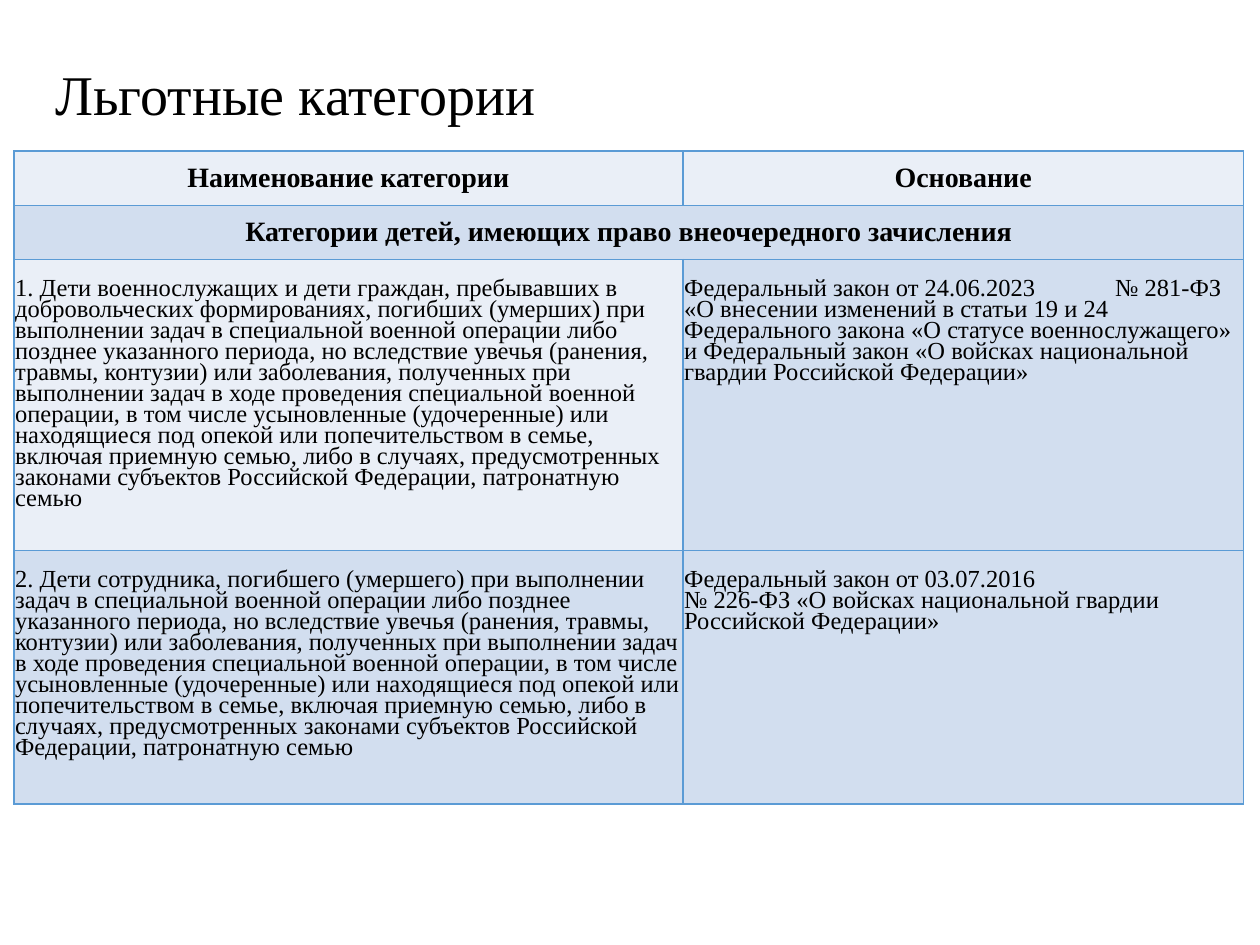
from typing import NamedTuple

import pptx
import pptx.dml.color
import pptx.enum.text
import pptx.oxml
import pptx.oxml.ns
import pptx.util
from pptx.util import Inches, Pt

FONT = "Times New Roman"
COLORS = {"text": "000000", "border": "5B9BD5", "light": "EAEFF7", "band": "D2DEEF"}
ALIGN = pptx.enum.text.PP_ALIGN
COL_WIDTHS = (5.31, 4.45)
ROW_HEIGHTS = (0.43, 0.43, 2.31, 2.01)
TAB_STOP = 3.42


class CellSpec(NamedTuple):
    row: int
    col: int
    text: str
    fill: str
    heading: bool = False
    span: int = 1


CELLS = [
    CellSpec(0, 0, "Наименование категории", "light", heading=True),
    CellSpec(0, 1, "Основание", "light", heading=True),
    CellSpec(1, 0, "Категории детей, имеющих право внеочередного зачисления",
             "band", heading=True, span=2),
    CellSpec(2, 0,
             "1. Дети военнослужащих и дети граждан, пребывавших в добровольческих "
             "формированиях, погибших (умерших) при выполнении задач в специальной "
             "военной операции либо позднее указанного периода, но вследствие увечья "
             "(ранения, травмы, контузии) или заболевания, полученных при выполнении "
             "задач в ходе проведения специальной военной операции, в том числе "
             "усыновленные (удочеренные) или находящиеся под опекой или "
             "попечительством в семье, включая приемную семью, либо в случаях, "
             "предусмотренных законами субъектов Российской Федерации, патронатную "
             "семью", "light"),
    CellSpec(2, 1,
             "Федеральный закон от 24.06.2023\t№ 281-ФЗ «О внесении изменений в "
             "статьи 19 и 24 Федерального закона «О статусе военнослужащего» и "
             "Федеральный закон «О войсках национальной гвардии Российской "
             "Федерации»", "band"),
    CellSpec(3, 0,
             "2. Дети сотрудника, погибшего (умершего) при выполнении задач в "
             "специальной военной операции либо позднее указанного периода, но "
             "вследствие увечья (ранения, травмы, контузии) или заболевания, "
             "полученных при выполнении задач в ходе проведения специальной военной "
             "операции, в том числе усыновленные (удочеренные) или находящиеся под "
             "опекой или попечительством в семье, включая приемную семью, либо в "
             "случаях, предусмотренных законами субъектов Российской Федерации, "
             "патронатную семью", "band"),
    CellSpec(3, 1,
             "Федеральный закон от 03.07.2016\v№ 226-ФЗ «О войсках национальной "
             "гвардии Российской Федерации»", "band"),
]


def rgb(name: str) -> pptx.dml.color.RGBColor:
    return pptx.dml.color.RGBColor.from_string(COLORS[name])


def format_runs(p, size: int, bold: bool = False) -> None:
    for r in p.runs:
        for name, value in {"name": FONT, "size": Pt(size), "bold": bold}.items():
            setattr(r.font, name, value)
        r.font.color.rgb = rgb("text")


def add_borders(cell) -> None:
    tc_pr = cell._tc.get_or_add_tcPr()
    for side in ("lnL", "lnR", "lnT", "lnB"):
        tc_pr.append(pptx.oxml.parse_xml(
            f'<a:{side} {pptx.oxml.ns.nsdecls("a")} w="{Pt(1)}"><a:solidFill>'
            f'<a:srgbClr val="{COLORS["border"]}"/></a:solidFill></a:{side}>'))


def add_tab_stop(p, position: float) -> None:
    p._p.get_or_add_pPr().append(pptx.oxml.parse_xml(
        f'<a:tabLst {pptx.oxml.ns.nsdecls("a")}>'
        f'<a:tab pos="{Inches(position)}" algn="l"/></a:tabLst>'))


def fill_cell(table, spec: CellSpec) -> None:
    cell = table.cell(spec.row, spec.col)
    if spec.span > 1:
        cell.merge(table.cell(spec.row, spec.col + spec.span - 1))
    for col in range(spec.col, spec.col + spec.span):
        part = table.cell(spec.row, col)
        add_borders(part)
        part.fill.solid()
        part.fill.fore_color.rgb = rgb(spec.fill)
    margins = {"margin_left": 0.01, "margin_right": 0.01,
               "margin_top": 0.17, "margin_bottom": 0}
    for name, value in margins.items():
        setattr(cell, name, Inches(value))
    p = cell.text_frame.paragraphs[0]
    p.text = spec.text
    p.alignment = ALIGN.CENTER if spec.heading else ALIGN.LEFT
    p.line_spacing = Pt(12)
    if "\t" in spec.text:
        add_tab_stop(p, TAB_STOP)
    format_runs(p, 16 if spec.heading else 14, spec.heading)


def add_title(s, text: str) -> None:
    title = s.shapes.title
    box = {"left": 0.34, "top": 0.42, "width": 6.47, "height": 0.64}
    for name, value in box.items():
        setattr(title, name, Inches(value))
    tf = title.text_frame
    tf.word_wrap = True
    tf.auto_size = pptx.enum.text.MSO_AUTO_SIZE.SHAPE_TO_FIT_TEXT
    tf.vertical_anchor = pptx.enum.text.MSO_ANCHOR.TOP
    tf.text = text
    tf.paragraphs[0].alignment = ALIGN.LEFT
    format_runs(tf.paragraphs[0], 32)


def add_categories_table(s) -> None:
    table = s.shapes.add_table(
        len(ROW_HEIGHTS), len(COL_WIDTHS), Inches(0.11), Inches(1.2),
        Inches(sum(COL_WIDTHS)), Inches(sum(ROW_HEIGHTS))).table
    table.first_row = table.horz_banding = False
    for column, width in zip(table.columns, COL_WIDTHS):
        column.width = Inches(width)
    for row, height in zip(table.rows, ROW_HEIGHTS):
        row.height = Inches(height)
    for spec in CELLS:
        fill_cell(table, spec)


def main() -> None:
    prs = pptx.Presentation()
    prs.slide_width, prs.slide_height = Inches(10), Inches(7.5)
    s = prs.slides.add_slide(prs.slide_layouts[5])
    add_title(s, "Льготные категории")
    add_categories_table(s)
    prs.save("out.pptx")


if __name__ == "__main__":
    main()
